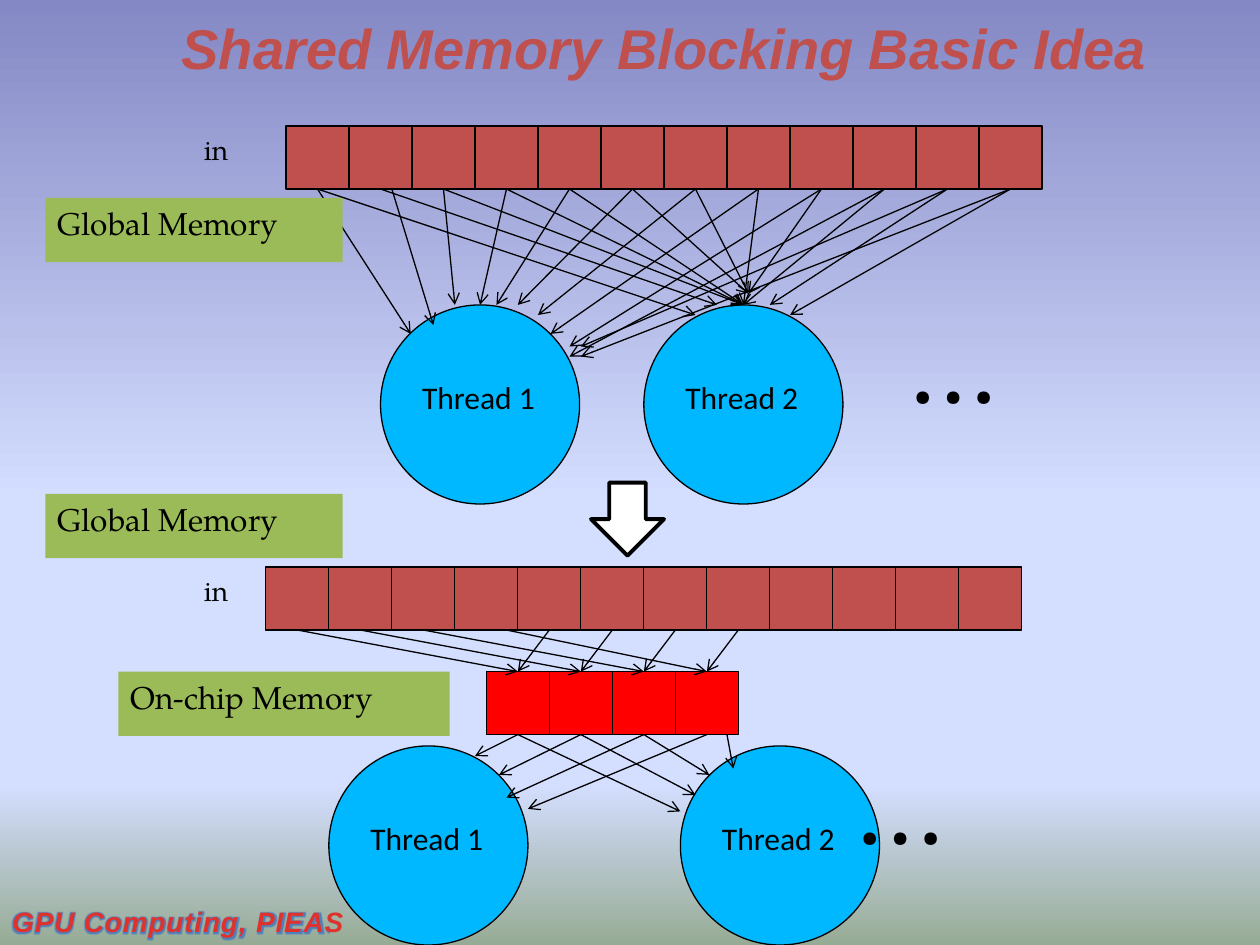
from pptx import Presentation
from pptx.dml.color import RGBColor
from pptx.enum.shapes import MSO_CONNECTOR, MSO_SHAPE
from pptx.enum.text import MSO_ANCHOR, PP_ALIGN
from pptx.oxml.ns import qn
from pptx.util import Inches, Pt
from lxml.etree import SubElement

BLACK = RGBColor(0x00, 0x00, 0x00)
WHITE = RGBColor(0xFF, 0xFF, 0xFF)
BRICK = RGBColor(0xC0, 0x50, 0x4D)
RED = RGBColor(0xFF, 0x00, 0x00)
CYAN = RGBColor(0x00, 0xB8, 0xFF)
GREEN = RGBColor(0x9B, 0xBB, 0x59)
FOOTER_RED = RGBColor(0xE0, 0x32, 0x2D)
GLOW_BLUE = RGBColor(0x4F, 0x81, 0xBD)
SKY = [
    (0, RGBColor(0x84, 0x88, 0xC4)),
    (53, RGBColor(0xD4, 0xDE, 0xFF)),
    (83, RGBColor(0xD4, 0xDE, 0xFF)),
    (100, RGBColor(0x96, 0xAB, 0x94)),
]
SERIF = "TeX Gyre Pagella"
CELL = 0.5
CIRCLE = 1.58

DIRECT_TO_FIRST = [
    (0, 3.26, 2.65), (1, 3.44, 2.58, 0.09), (2, 3.61, 2.42), (3, 3.81, 2.42),
    (4, 3.94, 2.42), (5, 4.11, 2.42), (6, 4.27, 2.5), (7, 4.37, 2.65),
    (8, 4.52, 2.75), (9, 4.52, 2.83), (10, 4.61, 2.75), (11, 4.61, 2.83),
]
DIRECT_TO_SECOND = [
    (0, 5.52, 2.5), (1, 5.69, 2.42), (2, 5.9, 2.42), (3, 5.9, 2.42),
    (4, 5.9, 2.42), (5, 5.94, 2.33), (6, 5.94, 2.33), (7, 5.9, 2.42),
    (8, 5.94, 2.33), (9, 5.9, 2.42), (10, 6.11, 2.42), (11, 6.27, 2.5),
]
CHIP_TO_FIRST = [(0, 3.77, 6), (1, 3.96, 6.15), (2, 4.02, 6.33), (3, 4.19, 6.42)]
CHIP_TO_SECOND = [(0, 5.4, 6.44), (1, 5.52, 6.31), (2, 5.63, 6.15), (3, 5.82, 6.1, 0.16)]


def paint_background(page):
    fill = page.background.fill
    fill.gradient()
    fill.gradient_angle = 270
    stops = page.element.find(".//" + qn("a:gsLst"))
    for stop in list(stops):
        stops.remove(stop)
    for percent, color in SKY:
        stop = SubElement(stops, qn("a:gs"), pos=str(percent * 1000))
        SubElement(stop, qn("a:srgbClr"), val=str(color))


def write(shape, words, size, font=SERIF, color=BLACK, strong=False, align=PP_ALIGN.LEFT):
    frame = shape.text_frame
    frame.word_wrap = True
    frame.vertical_anchor = MSO_ANCHOR.TOP
    para = frame.paragraphs[0]
    para.alignment = align
    span = para.add_run()
    span.text = words
    span.font.size = Pt(size)
    span.font.name = font
    span.font.color.rgb = color
    span.font.bold = span.font.italic = strong
    return span


def add_text(page, box, words, size, **style):
    shape = page.shapes.add_textbox(*map(Inches, box))
    return shape, write(shape, words, size, **style)


def add_block(page, kind, box, color, weight=0.75):
    shape = page.shapes.add_shape(kind, *map(Inches, box))
    shape.shadow.inherit = False
    shape.fill.solid()
    shape.fill.fore_color.rgb = color
    if weight:
        shape.line.color.rgb = BLACK
        shape.line.width = Pt(weight)
    else:
        shape.line.fill.background()
    return shape


def add_label(page, box, words):
    write(add_block(page, MSO_SHAPE.RECTANGLE, box, GREEN, weight=0), words, 18)


def add_row(page, left, top, count, color):
    return [
        add_block(page, MSO_SHAPE.RECTANGLE, (left + CELL * index, top, CELL, CELL), color)
        for index in range(count)
    ]


def add_threads(page, top, lefts, dots_left):
    for number, left in enumerate(lefts, 1):
        circle = add_block(page, MSO_SHAPE.OVAL, (left, top, CIRCLE, CIRCLE), CYAN)
        write(circle, f"Thread {number}", 18, font="Calibri")
        circle.text_frame.margin_top = Inches(0.35)
    add_text(page, (dots_left, top - 0.09, 1.67, 1.11), "…", 60)


def add_arrow(page, cell, x, y, shift=0):
    start_x = cell.left + cell.width // 2 + Inches(shift)
    arrow = page.shapes.add_connector(
        MSO_CONNECTOR.STRAIGHT, start_x, cell.top + cell.height, x, y
    )
    if not shift:
        arrow.begin_connect(cell, 2)
    arrow.line.color.rgb = BLACK
    arrow.line.width = Pt(0.75)
    SubElement(arrow.line._get_or_add_ln(), qn("a:tailEnd"), type="arrow")
    SubElement(arrow.element.spPr, qn("a:effectLst"))
    return arrow


def add_fan(page, cells, targets):
    for index, x, y, *shift in targets:
        add_arrow(page, cells[index], Inches(x), Inches(y), *shift)


def add_loads(page, cells, chips, first, shifts):
    for cell, chip, shift in zip(cells[first:], chips, shifts):
        arrow = add_arrow(page, cell, chip.left + chip.width // 2, chip.top, shift)
        arrow.end_connect(chip, 0)


def add_direct_access(page, left, top):
    cells = add_row(page, left, top, 12, BRICK)
    add_threads(page, top + 1.42, (3.02, 5.11), 7.11)
    add_text(page, (1.52, top, 0.5, 0.51), "in", 16)
    add_fan(page, cells, DIRECT_TO_FIRST + DIRECT_TO_SECOND)
    add_label(page, (0.36, top + 0.57, 2.36, 0.51), "Global Memory")


def add_blocked_access(page, left, top):
    cells = add_row(page, left, top, 12, BRICK)
    add_threads(page, top + 1.42, (2.61, 5.4), 6.69)
    chips = add_row(page, left + 1.75, top + 0.83, 4, RED)
    add_loads(page, cells, chips, 0, (0, 0, 0, 0.16))
    add_loads(page, cells, chips, 4, (0, 0, 0, 0))
    add_fan(page, chips, CHIP_TO_FIRST + CHIP_TO_SECOND)
    add_label(page, (0.36, top - 0.58, 2.36, 0.51), "Global Memory")
    add_text(page, (1.52, top, 0.5, 0.51), "in", 16)
    add_label(page, (0.94, top + 0.83, 2.63, 0.51), "On-chip Memory")


def add_title(page, box):
    title, _ = add_text(
        page, box, "Shared Memory Blocking Basic Idea", 32,
        font="Arial", color=BRICK, strong=True, align=PP_ALIGN.CENTER,
    )
    title.text_frame.vertical_anchor = MSO_ANCHOR.MIDDLE


def add_footer(page, box):
    _, span = add_text(
        page, box, "GPU Computing, PIEAS", 16,
        font="Arial", color=FOOTER_RED, strong=True, align=PP_ALIGN.CENTER,
    )
    style = span.font._element
    style.set("spc", "50")
    effects = SubElement(style, qn("a:effectLst"))
    glow = SubElement(effects, qn("a:glow"), rad=str(Pt(4)))
    SubElement(glow, qn("a:srgbClr"), val=str(GLOW_BLUE))
    style.find(qn("a:solidFill")).addnext(effects)


def main():
    deck = Presentation()
    deck.slide_width = Inches(10)
    deck.slide_height = Inches(7.5)
    page = deck.slides.add_slide(deck.slide_layouts[6])
    paint_background(page)
    add_footer(page, (-0.75, 7.13, 4.33, 0.87))
    add_title(page, (0.55, 0, 9.45, 0.75))
    add_direct_access(page, 2.27, 1)
    add_blocked_access(page, 2.11, 4.5)
    add_block(page, MSO_SHAPE.DOWN_ARROW, (4.69, 3.83, 0.58, 0.58), WHITE, weight=2.25)
    deck.save("out.pptx")


if __name__ == "__main__":
    main()
